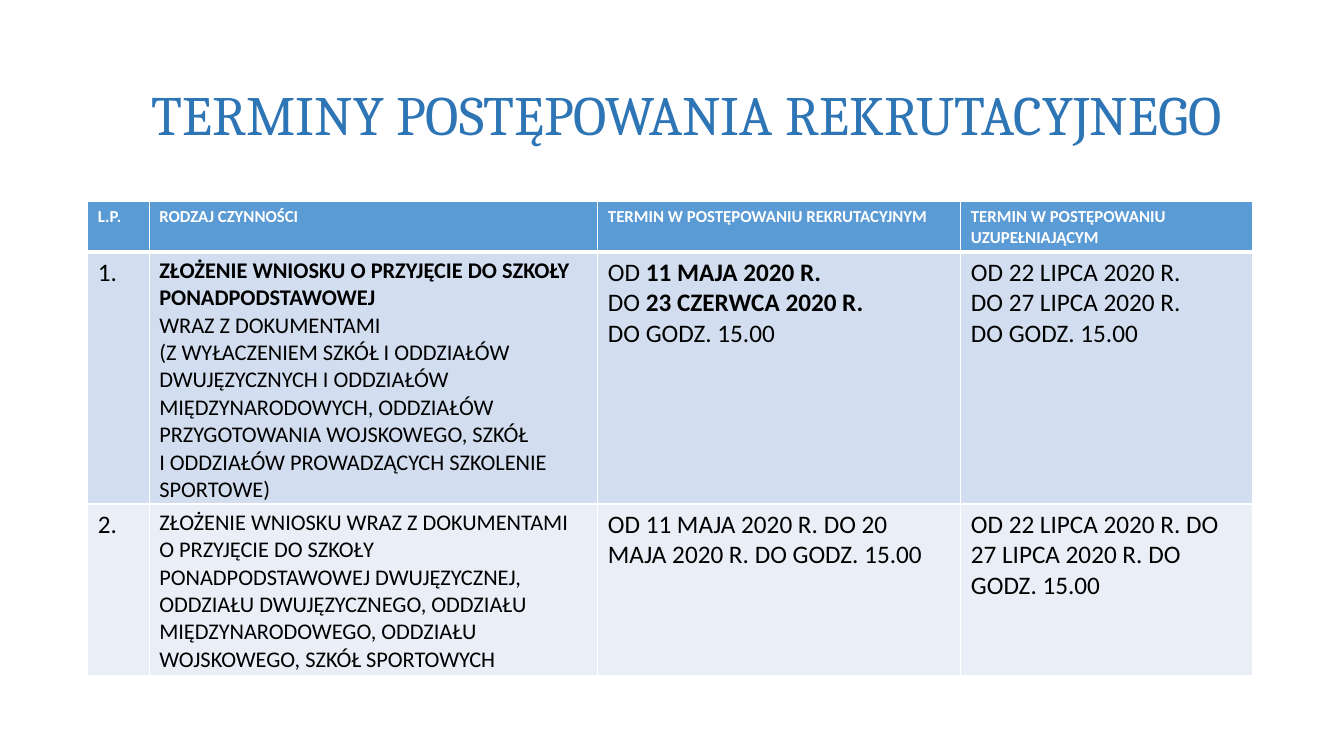
from lxml import etree
from pptx import Presentation
from pptx.dml.color import RGBColor
from pptx.enum.text import MSO_ANCHOR, PP_ALIGN
from pptx.oxml.ns import qn
from pptx.util import Inches, Pt

MIDDLE = MSO_ANCHOR.MIDDLE
LEFT, CENTER = PP_ALIGN.LEFT, PP_ALIGN.CENTER
WHITE, BLACK, BLUE = "FFFFFF", "000000", "2E75B6"
FILLS = ["5B9BD5", "D2DEEF", "EAEFF7"]
COLS = [0.61, 4.45, 3.6, 2.89]
SIZES = [18, 16, 18, 18]

# Asterisks switch bold on and off
ROWS = [
    ["*L.P.", "*RODZAJ CZYNNOŚCI", "*TERMIN W POSTĘPOWANIU REKRUTACYJNYM",
     "*TERMIN W POSTĘPOWANIU UZUPEŁNIAJĄCYM"],
    ["1.",
     "*ZŁOŻENIE WNIOSKU O PRZYJĘCIE DO SZKOŁY PONADPODSTAWOWEJ\n*"
     "WRAZ Z DOKUMENTAMI\n"
     "(Z WYŁACZENIEM SZKÓŁ I ODDZIAŁÓW DWUJĘZYCZNYCH I ODDZIAŁÓW "
     "MIĘDZYNARODOWYCH, ODDZIAŁÓW PRZYGOTOWANIA WOJSKOWEGO, SZKÓŁ\n"
     "I ODDZIAŁÓW PROWADZĄCYCH SZKOLENIE SPORTOWE)",
     "OD *11 MAJA 2020 R.\n*DO *23 CZERWCA 2020 R.\n*DO GODZ. 15.00",
     "OD 22 LIPCA 2020 R.\nDO 27 LIPCA 2020 R.\nDO GODZ. 15.00"],
    ["2.",
     "ZŁOŻENIE WNIOSKU WRAZ Z DOKUMENTAMI O PRZYJĘCIE DO SZKOŁY "
     "PONADPODSTAWOWEJ DWUJĘZYCZNEJ, ODDZIAŁU DWUJĘZYCZNEGO, ODDZIAŁU "
     "MIĘDZYNARODOWEGO, ODDZIAŁU WOJSKOWEGO, SZKÓŁ SPORTOWYCH",
     "OD 11 MAJA 2020 R. DO 20 MAJA 2020 R. DO GODZ. 15.00",
     "OD 22 LIPCA 2020 R. DO 27 LIPCA 2020 R. DO GODZ. 15.00"],
]


def color(code):
    return RGBColor.from_string(code)


def write(frame, text, size=18, font="Calibri", ink=BLACK, align=LEFT):
    frame.word_wrap = True
    para = frame.paragraphs[0]
    para.alignment = align
    for part, chunk in enumerate(text.split("*")):
        for row, line in enumerate(chunk.split("\n")):
            if row:
                para.add_line_break()
            if line:
                run = para.add_run()
                run.text = line
                run.font.size = Pt(size)
                run.font.name = font
                run.font.bold = part % 2 == 1
                run.font.color.rgb = color(ink)


def border(cell, sides):
    props = cell._tc.get_or_add_tcPr()
    for side, width in sides.items():
        line = etree.SubElement(props, qn("a:ln" + side), w=str(Pt(width)))
        fill = etree.SubElement(line, qn("a:solidFill"))
        etree.SubElement(fill, qn("a:srgbClr"), val=WHITE)


class Deck:
    def __init__(self):
        self.show = Presentation()
        self.show.slide_width = Inches(13.33)
        self.show.slide_height = Inches(7.5)
        self.slide = self.show.slides.add_slide(self.show.slide_layouts[6])

    def title(self, text, *place):
        box = self.slide.shapes.add_textbox(*map(Inches, place))
        box.text_frame.vertical_anchor = MIDDLE
        write(box.text_frame, text, size=39.6, font="Cambria", ink=BLUE,
              align=CENTER)

    def table(self, rows, *place):
        frame = self.slide.shapes.add_table(
            len(rows), len(COLS), *map(Inches, place))
        grid = frame.table
        for col, width in zip(grid.columns, COLS):
            col.width = Inches(width)
        for r, texts in enumerate(rows):
            grid.rows[r].height = Inches(0.41)
            for c, text in enumerate(texts):
                cell = grid.cell(r, c)
                border(cell, {"L": 1, "R": 1, "T": 3 if r == 1 else 1,
                              "B": 1 if r else 3})
                cell.fill.solid()
                cell.fill.fore_color.rgb = color(FILLS[r])
                write(cell.text_frame, text, size=SIZES[c] if r else 12,
                      ink=BLACK if r else WHITE)
        frame.height = Inches(place[3])


def main():
    deck = Deck()
    # Heading
    deck.title("TERMINY POSTĘPOWANIA REKRUTACYJNEGO", 1.2, 0.4, 11.22, 1.45)
    # Schedule
    deck.table(ROWS, 0.87, 2, 11.54, 4.7)
    deck.show.save("out.pptx")


if __name__ == "__main__":
    main()
